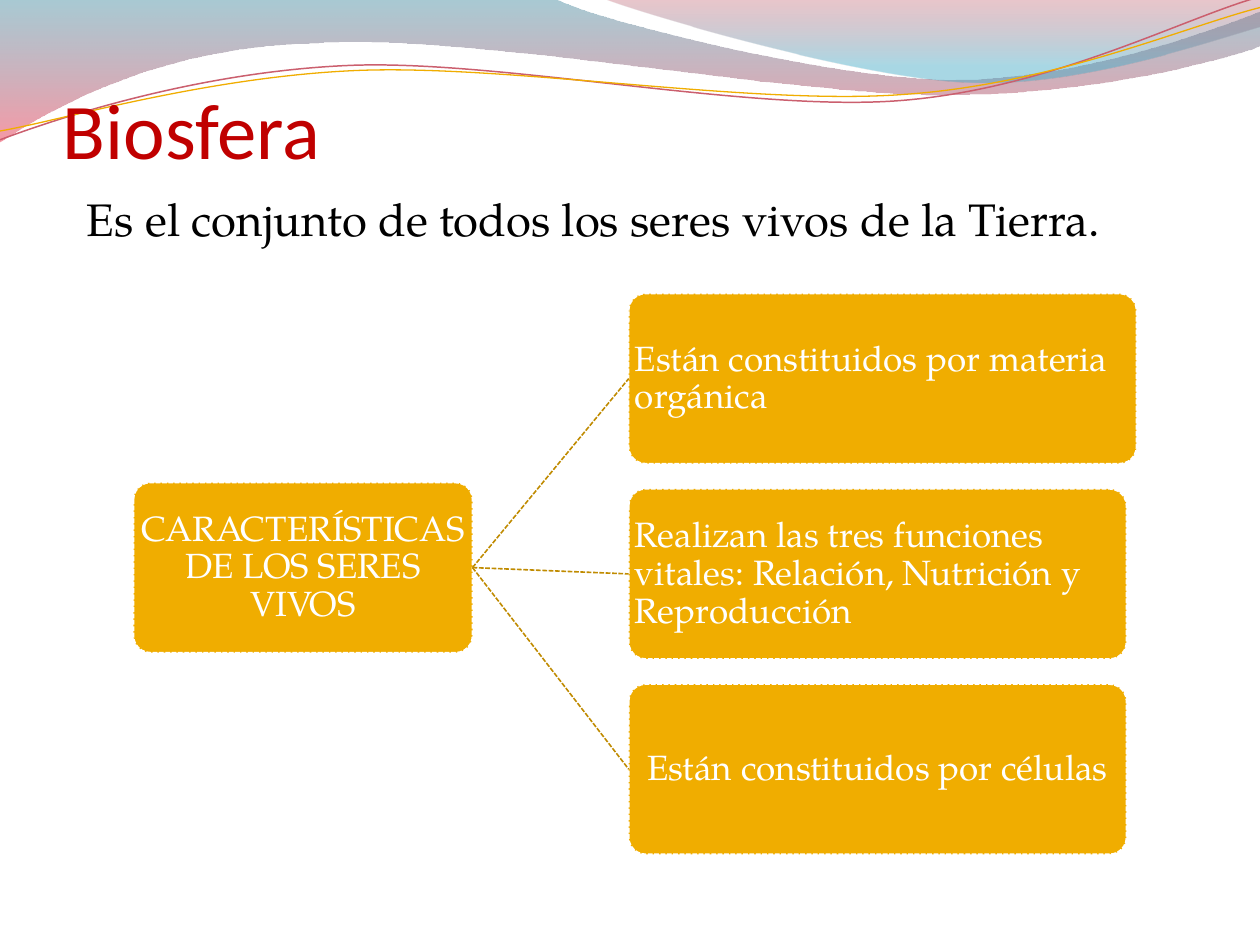
"""Build the slide on the biosphere: wave header, definition and characteristics tree."""
import pptx
import pptx.dml.color
import pptx.enum.dml
import pptx.enum.shapes
import pptx.enum.text
import pptx.oxml.ns
import pptx.util
from lxml import etree

TITLE = "Biosfera"
DEFINITION = "Es el conjunto de todos los seres vivos de la Tierra."
ROOT = "CARACTERÍSTICAS DE LOS SERES VIVOS"
TRAITS = [
    ("Están constituidos por materia orgánica", 4.03, "LEFT"),
    ("Realizan las tres funciones vitales: Relación, Nutrición y Reproducción", 3.95, "LEFT"),
    ("Están constituidos por células", 3.95, "CENTER"),
]
BANDS = [
    {
        "points": [
            (-0.01, 0), (4.4, -0.01),
            (4.76, 0.17, 6.64, 0.63, 7.58, 0.63), (8.53, 0.63, 9.58, 0.26, 10, 0.09),
            (10.01, 0.36),
            (9.83, 0.44, 8.7, 0.76, 7.46, 0.75), (6.22, 0.75, 3.82, 0.28, 2.57, 0.34),
            (1.29, 0.36, 0.46, 0.83, -0.01, 1.13),
        ],
        "stops": [(0, "3F8A9F", 45), (1, "EF445B", 55)],
    },
    {
        "points": [
            (4.79, -0.01),
            (5.09, 0.11, 6.82, 0.62, 7.69, 0.65), (8.56, 0.69, 9.61, 0.32, 10, 0.21),
            (10, 0),
        ],
        "stops": [(0, "B84253", 30), (0.8, "42ABC7", 45)],
    },
]
STRANDS = [
    {
        "points": [
            (0, 1.11), (0.48, 0.93, 1.58, 0.57, 2.77, 0.52),
            (3.95, 0.47, 5.93, 0.89, 7.13, 0.8), (8.33, 0.71, 9.38, 0.15, 9.98, -0.02),
        ],
        "color": "CB5F6E", "width": 0.85,
    },
    {
        "points": [
            (0, 1.04), (0.47, 0.96, 1.64, 0.61, 2.83, 0.56),
            (4.03, 0.51, 5.97, 0.84, 7.17, 0.75), (8.36, 0.67, 9.41, 0.21, 10, 0.06),
        ],
        "color": "F0AD00", "width": 0.75,
    },
]
HEADING_FONT, BODY_FONT = "Calibri", "TeX Gyre Pagella"
CARD_HEIGHT, CARD_PITCH = 1.35, 1.55
ROOT_LEFT, ROOT_TOP, ROOT_WIDTH = 1.06, 3.83, 2.69
TRAIT_LEFT, TRAIT_TOP = 4.99, 2.33


def rgb(value):
    return pptx.dml.color.RGBColor.from_string(value)


def inches(*values):
    return [pptx.util.Inches(value) for value in values]


def set_line(line, color, width, dash=None):
    line.color.rgb = rgb(color)
    line.width = pptx.util.Pt(width)
    if dash:
        line.dash_style = dash


def add_wave(slide, points, close):
    corners = [inches(*point[-2:]) for point in points]
    builder = slide.shapes.build_freeform(*corners[0], scale=1.0)
    builder.add_line_segments(corners[1:], close=close)
    shape = builder.convert_to_shape()
    shape.shadow.inherit = False
    segments = list(shape._element.spPr.iter(pptx.oxml.ns.qn("a:lnTo")))
    for segment, point in zip(segments, points[1:]):
        if len(point) == 6:
            bend(segment, inches(*point[:4]), shape.left, shape.top)
    return shape


def bend(segment, controls, left, top):
    """Turn a straight segment into a cubic curve with two control points."""
    segment.tag = pptx.oxml.ns.qn("a:cubicBezTo")
    for index in range(2):
        control = etree.Element(pptx.oxml.ns.qn("a:pt"))
        control.set("x", str(controls[2 * index] - left))
        control.set("y", str(controls[2 * index + 1] - top))
        segment.insert(index, control)


def add_band(slide, points, stops):
    shape = add_wave(slide, points, True)
    shape.line.fill.background()
    shape.fill.gradient()
    shape.fill.gradient_angle = 270
    for stop, (position, color, _) in zip(shape.fill.gradient_stops, stops):
        stop.position = position
        stop.color.rgb = rgb(color)
    colors = list(shape._element.spPr.iter(pptx.oxml.ns.qn("a:srgbClr")))
    for element, (_, _, opacity) in zip(colors, stops):
        alpha = etree.SubElement(element, pptx.oxml.ns.qn("a:alpha"))
        alpha.set("val", str(opacity * 1000))


def add_strand(slide, points, color, width):
    shape = add_wave(slide, points, False)
    shape.fill.background()
    set_line(shape.line, color, width)


def write(shape, text, size, color, font=BODY_FONT, align="LEFT", anchor="TOP",
          margins=(0, 0, 0, 0), line_spacing=1.0, space_before=0):
    frame = shape.text_frame
    frame.word_wrap = True
    frame.vertical_anchor = pptx.enum.text.MSO_ANCHOR[anchor]
    (frame.margin_left, frame.margin_top,
     frame.margin_right, frame.margin_bottom) = inches(*margins)
    paragraph = frame.paragraphs[0]
    paragraph.alignment = pptx.enum.text.PP_ALIGN[align]
    paragraph.line_spacing = line_spacing
    paragraph.space_before = pptx.util.Pt(space_before)
    run = paragraph.add_run()
    run.text = text
    run.font.name = font
    run.font.size = pptx.util.Pt(size)
    run.font.color.rgb = rgb(color)


def add_card(slide, text, left, top, width, align):
    shape = slide.shapes.add_shape(
        pptx.enum.shapes.MSO_SHAPE.ROUNDED_RECTANGLE, *inches(left, top, width, CARD_HEIGHT))
    shape.adjustments[0] = 0.1
    shape.shadow.inherit = False
    shape.fill.solid()
    shape.fill.fore_color.rgb = rgb("F0AD00")
    set_line(shape.line, "FFFFFF", 0.9, pptx.enum.dml.MSO_LINE.SQUARE_DOT)
    write(shape, text, 20, "FFFFFF", align=align, anchor="MIDDLE",
          margins=(0.01,) * 4, line_spacing=0.9)
    return shape


def add_branch(slide, root, card):
    connector = slide.shapes.add_connector(
        pptx.enum.shapes.MSO_CONNECTOR.STRAIGHT, 0, 0, 0, 0)
    connector.begin_connect(root, 3)
    connector.end_connect(card, 1)
    set_line(connector.line, "C08B00", 0.9, pptx.enum.dml.MSO_LINE.SQUARE_DOT)
    etree.SubElement(connector._element.spPr, pptx.oxml.ns.qn("a:effectLst"))


def main():
    presentation = pptx.Presentation()
    presentation.slide_width, presentation.slide_height = inches(10, 7.5)
    slide = presentation.slides.add_slide(presentation.slide_layouts[6])
    for band in BANDS:
        add_band(slide, **band)
    for strand in STRANDS:
        add_strand(slide, **strand)
    title = slide.shapes.add_textbox(*inches(0.5, 0.77, 9, 0.62))
    write(title, TITLE, 45, "C00000", font=HEADING_FONT, anchor="BOTTOM",
          margins=(0, 0.05, 0, 0))
    definition = slide.shapes.add_textbox(*inches(0.5, 1.47, 9, 5.45))
    write(definition, DEFINITION, 26, "000000", margins=(0.19, 0.05, 0.1, 0.05),
          space_before=5.2)
    root = add_card(slide, ROOT, ROOT_LEFT, ROOT_TOP, ROOT_WIDTH, "CENTER")
    for row, (text, width, align) in enumerate(TRAITS):
        card = add_card(slide, text, TRAIT_LEFT, TRAIT_TOP + row * CARD_PITCH, width, align)
        add_branch(slide, root, card)
    presentation.save("out.pptx")


if __name__ == "__main__":
    main()
